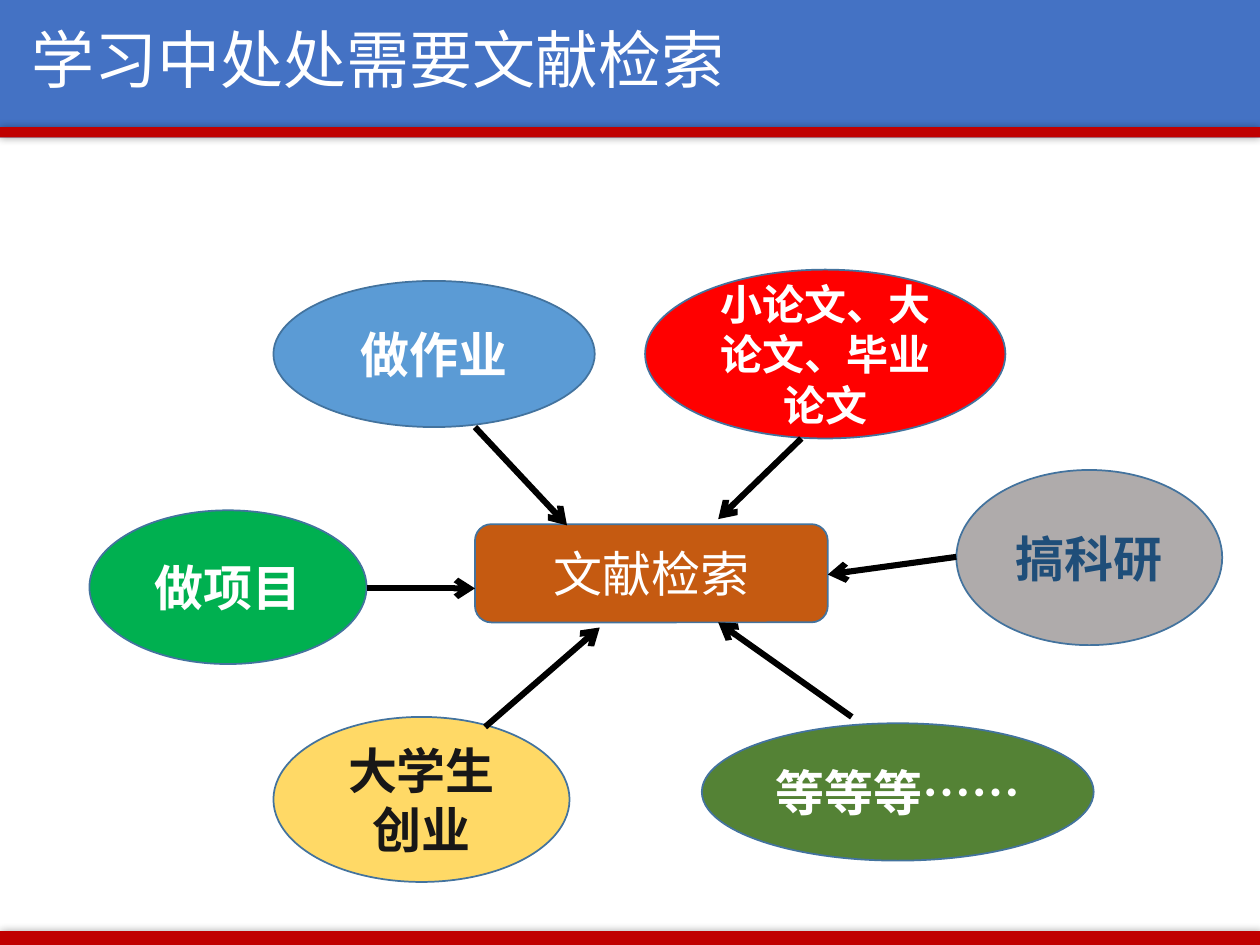
"""Build the slide on where students need literature searching."""
from lxml import etree
from pptx import Presentation
from pptx.dml.color import RGBColor
from pptx.enum.shapes import MSO_CONNECTOR, MSO_SHAPE
from pptx.enum.text import MSO_ANCHOR, PP_ALIGN
from pptx.oxml import parse_xml
from pptx.oxml.ns import nsdecls, qn
from pptx.util import Inches, Pt


def color(value):
    return RGBColor.from_string(value)


def write(shape, text, size, font_name, text_color, bold, alignment):
    shape.text_frame.word_wrap = True
    shape.text_frame.vertical_anchor = MSO_ANCHOR.MIDDLE
    paragraph = shape.text_frame.paragraphs[0]
    paragraph.alignment = alignment
    run = paragraph.add_run()
    run.text = text
    run.font.size = Pt(size)
    run.font.bold = bold
    run.font.color.rgb = color(text_color)
    run.font.name = font_name
    east_asian = etree.SubElement(run.font._element, qn("a:ea"))
    east_asian.set("typeface", "Noto Sans CJK SC")


presentation = Presentation()
presentation.slide_width = Inches(10)
presentation.slide_height = Inches(7.5)
slide = presentation.slides.add_slide(presentation.slide_layouts[5])

bands = [
    (0, 0, 10, 1.09, "4472C4", False),
    (-0.01, 1.01, 10.01, 0.08, "C00000", True),
    (0, 7.39, 10.01, 0.11, "C00000", True),
]
for left, top, width, height, fill, has_shadow in bands:
    band = slide.shapes.add_shape(
        MSO_SHAPE.RECTANGLE, Inches(left), Inches(top), Inches(width), Inches(height))
    band.fill.solid()
    band.fill.fore_color.rgb = color(fill)
    band.line.fill.background()
    band.shadow.inherit = False
    if has_shadow:
        effects = band.element.spPr.find(qn("a:effectLst"))
        effects.append(parse_xml(
            f'<a:outerShdw {nsdecls("a")} blurRad="{Pt(5)}" dist="0" dir="0">'
            '<a:srgbClr val="000000"><a:alpha val="40000"/></a:srgbClr></a:outerShdw>'))

title = slide.shapes.title
slide.shapes.element.append(title.element)
title.left, title.top = Inches(0.15), Inches(0.1)
title.width, title.height = Inches(8.62), Inches(0.81)
write(title, "学习中处处需要文献检索", 36, "Noto Sans CJK SC", "FFFFFF", False, PP_ALIGN.LEFT)
title.text_frame.paragraphs[0].line_spacing = 0.9

OVAL, ROUNDED = MSO_SHAPE.OVAL, MSO_SHAPE.ROUNDED_RECTANGLE
nodes = [
    (OVAL, 2.17, 2.23, 2.55, 1.16, "5B9BD5", "做作业", 28, "FFFFFF"),
    (OVAL, 5.12, 2.14, 2.86, 1.34, "FF0000", "小论文、大论文、毕业论文", 24, "FFFFFF"),
    (OVAL, 7.59, 3.73, 2.11, 1.39, "AFABAB", "搞科研", 28, "1F4E79"),
    (OVAL, 0.71, 4.05, 2.2, 1.22, "00B050", "做项目", 28, "FFFFFF"),
    (OVAL, 2.17, 5.69, 2.35, 1.31, "FFD966", "大学生创业", 28, "181717"),
    (OVAL, 5.57, 5.74, 3.11, 1.09, "548235", "等等等……", 28, "FFFFFF"),
    (ROUNDED, 3.77, 4.16, 2.8, 0.78, "C55A11", "文献检索", 28, "FFFFFF"),
]
for kind, left, top, width, height, fill, text, size, text_color in nodes:
    node = slide.shapes.add_shape(
        kind, Inches(left), Inches(top), Inches(width), Inches(height))
    node.fill.solid()
    node.fill.fore_color.rgb = color(fill)
    node.line.color.rgb = color("43739E")
    node.line.width = Pt(1)
    node.shadow.inherit = False
    write(node, text, size, "Calibri", text_color, kind == OVAL, PP_ALIGN.CENTER)

arrows = [
    (3.77, 3.39, 4.5, 4.17),
    (2.91, 4.67, 3.77, 4.67),
    (3.85, 5.77, 4.76, 4.98),
    (6.36, 3.48, 5.7, 4.12),
    (6.76, 5.69, 5.7, 4.94),
    (7.59, 4.42, 6.57, 4.56),
]
for points in arrows:
    arrow = slide.shapes.add_connector(MSO_CONNECTOR.STRAIGHT, *map(Inches, points))
    arrow.line.color.rgb = color("000000")
    arrow.line.width = Pt(3.5)
    properties = arrow.element.spPr
    etree.SubElement(properties.find(qn("a:ln")), qn("a:tailEnd")).set("type", "arrow")
    etree.SubElement(properties, qn("a:effectLst"))

presentation.save("out.pptx")
